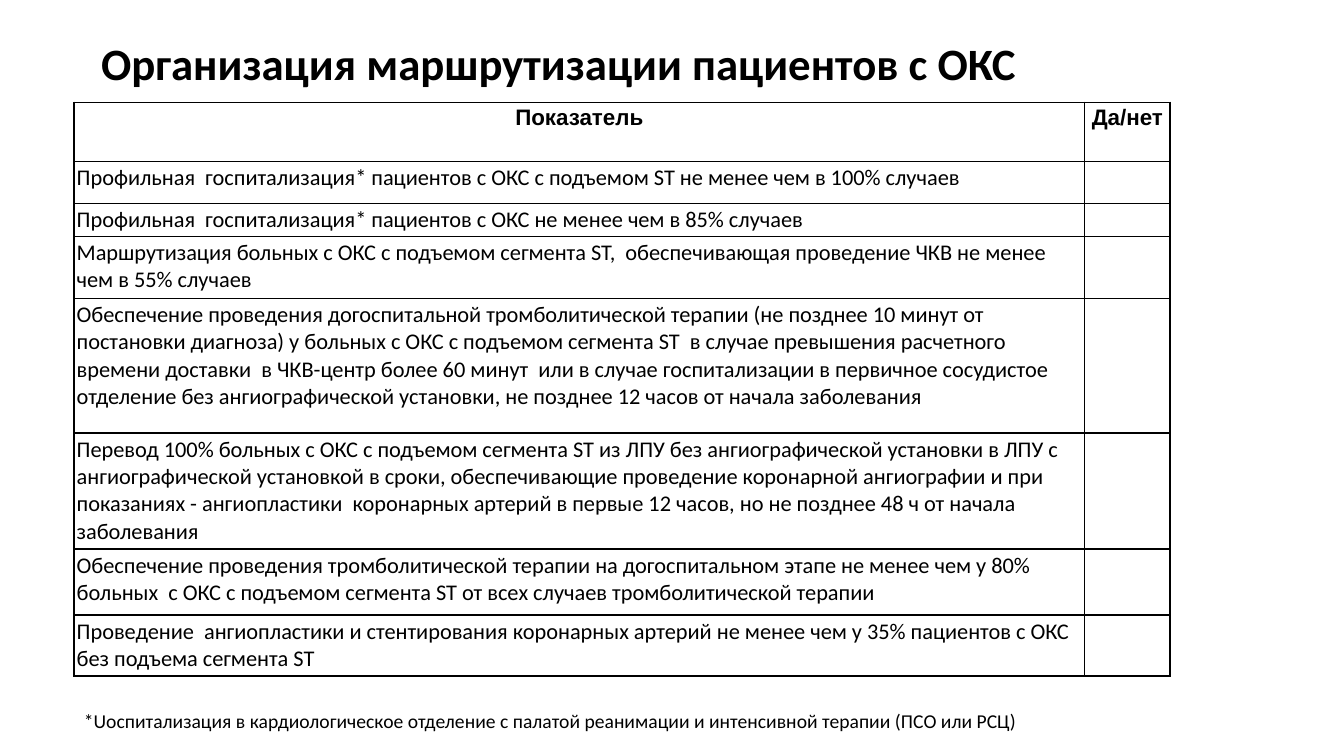
from lxml import etree
from pptx import Presentation
from pptx.dml import color
from pptx.enum import text
from pptx.oxml import ns
from pptx.util import Pt


def style(paragraph, size, font="Calibri", bold=False, ink="000000"):
    paragraph.font.size = Pt(size)
    paragraph.font.name = font
    paragraph.font.bold = bold
    paragraph.font.color.rgb = color.RGBColor.from_string(ink)


def add_borders(cell, ink="000000"):
    properties = cell._tc.get_or_add_tcPr()
    for side in ("a:lnL", "a:lnR", "a:lnT", "a:lnB"):
        line = etree.SubElement(properties, ns.qn(side), w=str(Pt(1)))
        fill = etree.SubElement(line, ns.qn("a:solidFill"))
        etree.SubElement(fill, ns.qn("a:srgbClr"), val=ink)


indicators = [
    ("Показатель", 42.1),
    ("Профильная  госпитализация* пациентов с ОКС с подъемом ST не менее чем в 100% случаев", 30),
    ("Профильная  госпитализация* пациентов с ОКС не менее чем в 85% случаев", 23.6),
    ("Маршрутизация больных с ОКС с подъемом сегмента ST,  обеспечивающая проведение ЧКВ "
     "не менее чем в 55% случаев", 44.3),
    ("Обеспечение проведения догоспитальной тромболитической терапии (не позднее 10 минут "
     "от постановки диагноза) у больных с ОКС с подъемом сегмента ST  в случае превышения "
     "расчетного времени доставки  в ЧКВ-центр более 60 минут  или в случае госпитализации "
     "в первичное сосудистое отделение без ангиографической установки, не позднее 12 часов "
     "от начала заболевания", 96.4),
    ("Перевод 100% больных с ОКС с подъемом сегмента ST из ЛПУ без ангиографической установки "
     "в ЛПУ с ангиографической установкой в сроки, обеспечивающие проведение коронарной "
     "ангиографии и при показаниях - ангиопластики  коронарных артерий в первые 12 часов, "
     "но не позднее 48 ч от начала заболевания", 82.9),
    ("Обеспечение проведения тромболитической терапии на догоспитальном этапе не менее чем "
     "у 80% больных  с ОКС с подъемом сегмента ST от всех случаев тромболитической терапии", 47.1),
    ("Проведение  ангиопластики и стентирования коронарных артерий не менее чем у 35% "
     "пациентов с ОКС без подъема сегмента ST", 43.6),
]

deck = Presentation()
deck.slide_width, deck.slide_height = Pt(960), Pt(540)
slide = deck.slides.add_slide(deck.slide_layouts[5])

heading = slide.shapes.title
heading.left, heading.top, heading.width, heading.height = Pt(65), Pt(21), Pt(830), Pt(52.5)
heading.text_frame.text = "Организация маршрутизации пациентов с ОКС"
heading.text_frame.auto_size = text.MSO_AUTO_SIZE.NONE
heading.text_frame.vertical_anchor = text.MSO_ANCHOR.MIDDLE
heading_line = heading.text_frame.paragraphs[0]
heading_line.alignment = text.PP_ALIGN.LEFT
heading_line.line_spacing = 0.9
style(heading_line, 32, bold=True)

total_height = sum(height for _, height in indicators)
checklist = slide.shapes.add_table(
    len(indicators), 2, Pt(52.8), Pt(73), Pt(783), Pt(total_height)).table
checklist.horz_banding = False
checklist.columns[0].width, checklist.columns[1].width = Pt(722), Pt(61)

for row, (indicator, height) in enumerate(indicators):
    checklist.rows[row].height = Pt(height)
    is_header = row == 0
    for column, content in enumerate((indicator, "Да/нет" if is_header else "")):
        cell = checklist.cell(row, column)
        cell.text = content
        cell.margin_left = cell.margin_right = Pt(2)
        cell.margin_top = cell.margin_bottom = Pt(2 if content else 0)
        add_borders(cell)
        cell.fill.background()
        entry = cell.text_frame.paragraphs[0]
        entry.alignment = text.PP_ALIGN.CENTER if is_header else text.PP_ALIGN.LEFT
        style(entry, 16, "Arial" if is_header else "Calibri", is_header)

footnote = slide.shapes.add_textbox(Pt(52.8), Pt(503), Pt(705), Pt(24.5)).text_frame
footnote.word_wrap = False
footnote.auto_size = text.MSO_AUTO_SIZE.SHAPE_TO_FIT_TEXT
footnote.text = ("*Uоспитализация в кардиологическое отделение с палатой реанимации "
                 "и интенсивной терапии (ПСО или РСЦ)")
style(footnote.paragraphs[0], 14)

deck.save("out.pptx")
